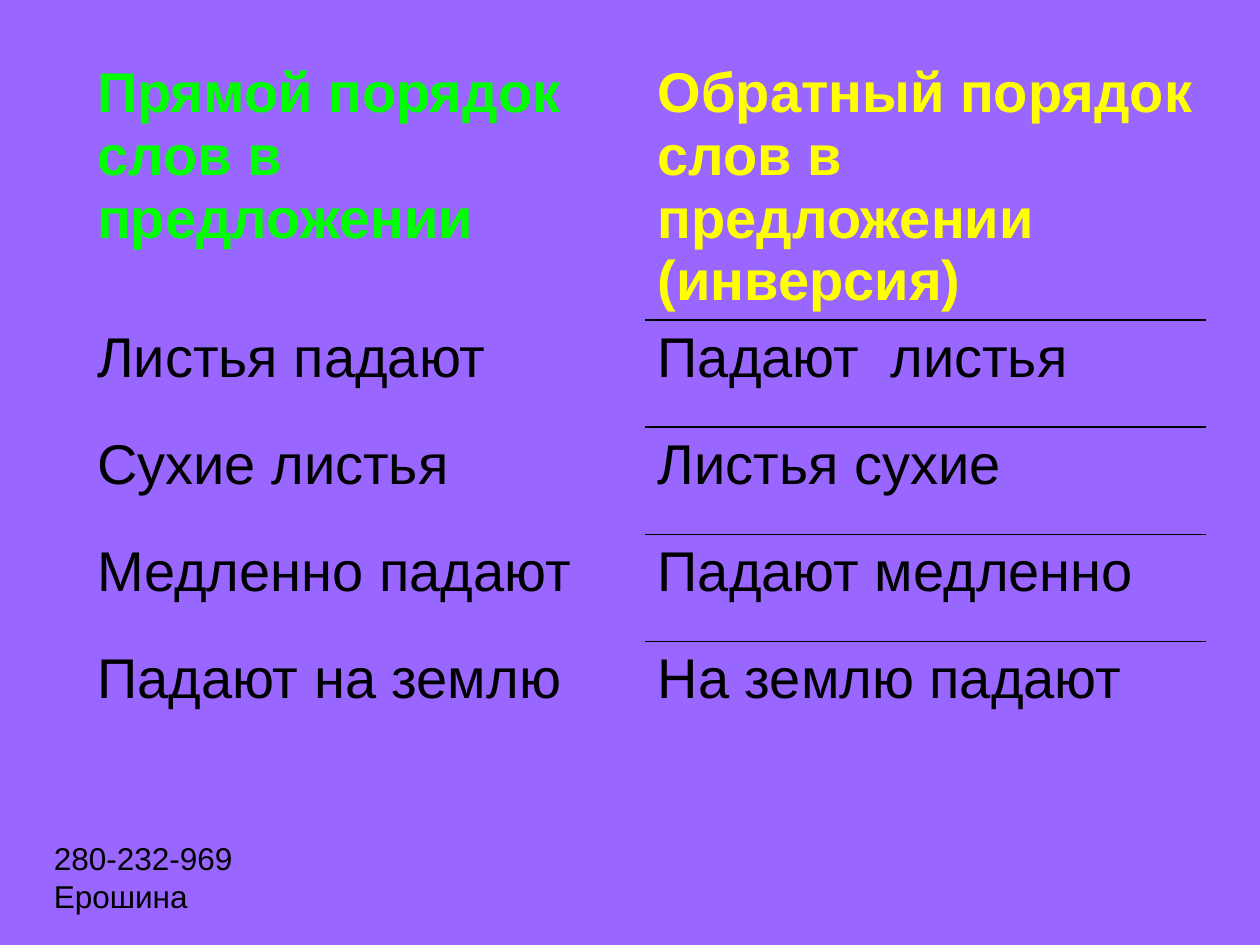
from lxml import etree
from pptx import Presentation
from pptx.dml.color import RGBColor
from pptx.enum.text import MSO_AUTO_SIZE
from pptx.oxml.ns import qn
from pptx.util import Inches, Pt

FIT_SHAPE = MSO_AUTO_SIZE.SHAPE_TO_FIT_TEXT

FONT = "Arial"
COLORS = {"background": "9966FF", "direct": "00FF00", "inverted": "FFFF00", "text": "000000"}
HEADINGS = [
    ("Прямой порядок слов в предложении", "direct"),
    ("Обратный порядок слов в предложении (инверсия)", "inverted"),
]
EXAMPLES = [
    ("Листья падают", "Падают  листья"),
    ("Сухие листья", "Листья сухие"),
    ("Медленно падают", "Падают медленно"),
    ("Падают на землю", "На землю падают"),
]
SIGNATURE = ["280-232-969", "Ерошина"]

SLIDE_W, SLIDE_H = 10, 7.5
LEFT, TOP = 0.67, 0.44
COLUMN_W, HEADING_H, EXAMPLE_H = 4.45, 2.1, 0.85


def rgb(name):
    return RGBColor.from_string(COLORS[name])


def write(paragraph, words, size, color, bold=False):
    run = paragraph.add_run()
    run.text = words
    run.font.name = FONT
    run.font.size = Pt(size)
    run.font.bold = bold
    run.font.color.rgb = rgb(color)


def set_borders(cell, ruled_sides):
    properties = cell._tc.get_or_add_tcPr()
    for side in ("L", "R", "T", "B"):
        border = etree.SubElement(properties, qn(f"a:ln{side}"))
        if side in ruled_sides:
            border.set("w", str(Pt(1)))
            fill = etree.SubElement(border, qn("a:solidFill"))
            etree.SubElement(fill, qn("a:srgbClr"), val=COLORS["text"])
        else:
            etree.SubElement(border, qn("a:noFill"))


def add_word_order_table(slide):
    rows = [HEADINGS] + [[(words, "text") for words in pair] for pair in EXAMPLES]
    heights = [HEADING_H] + [EXAMPLE_H] * len(EXAMPLES)
    table = slide.shapes.add_table(
        len(rows), len(HEADINGS), Inches(LEFT), Inches(TOP),
        Inches(COLUMN_W * len(HEADINGS)), Inches(sum(heights)),
    ).table
    table.first_row = False
    table.horz_banding = False
    for r, (row, height) in enumerate(zip(rows, heights)):
        table.rows[r].height = Inches(height)
        for c, (words, color) in enumerate(row):
            cell = table.cell(r, c)
            write(cell.text_frame.paragraphs[0], words, 32, color, bold=r == 0)
            ruled = ""
            if c == 1:
                ruled = ("T" if r > 0 else "") + ("B" if r < len(rows) - 1 else "")
            set_borders(cell, ruled)
            cell.fill.background()


def add_signature(slide):
    frame = slide.shapes.add_textbox(
        Inches(0.33), Inches(6.61), Inches(1.83), Inches(0.7)
    ).text_frame
    frame.word_wrap = True
    frame.auto_size = FIT_SHAPE
    for i, line in enumerate(SIGNATURE):
        paragraph = frame.add_paragraph() if i else frame.paragraphs[0]
        write(paragraph, line, 18, "text")


def main():
    deck = Presentation()
    deck.slide_width, deck.slide_height = Inches(SLIDE_W), Inches(SLIDE_H)
    slide = deck.slides.add_slide(deck.slide_layouts[6])
    slide.background.fill.solid()
    slide.background.fill.fore_color.rgb = rgb("background")
    add_word_order_table(slide)
    add_signature(slide)
    deck.save("out.pptx")


if __name__ == "__main__":
    main()
